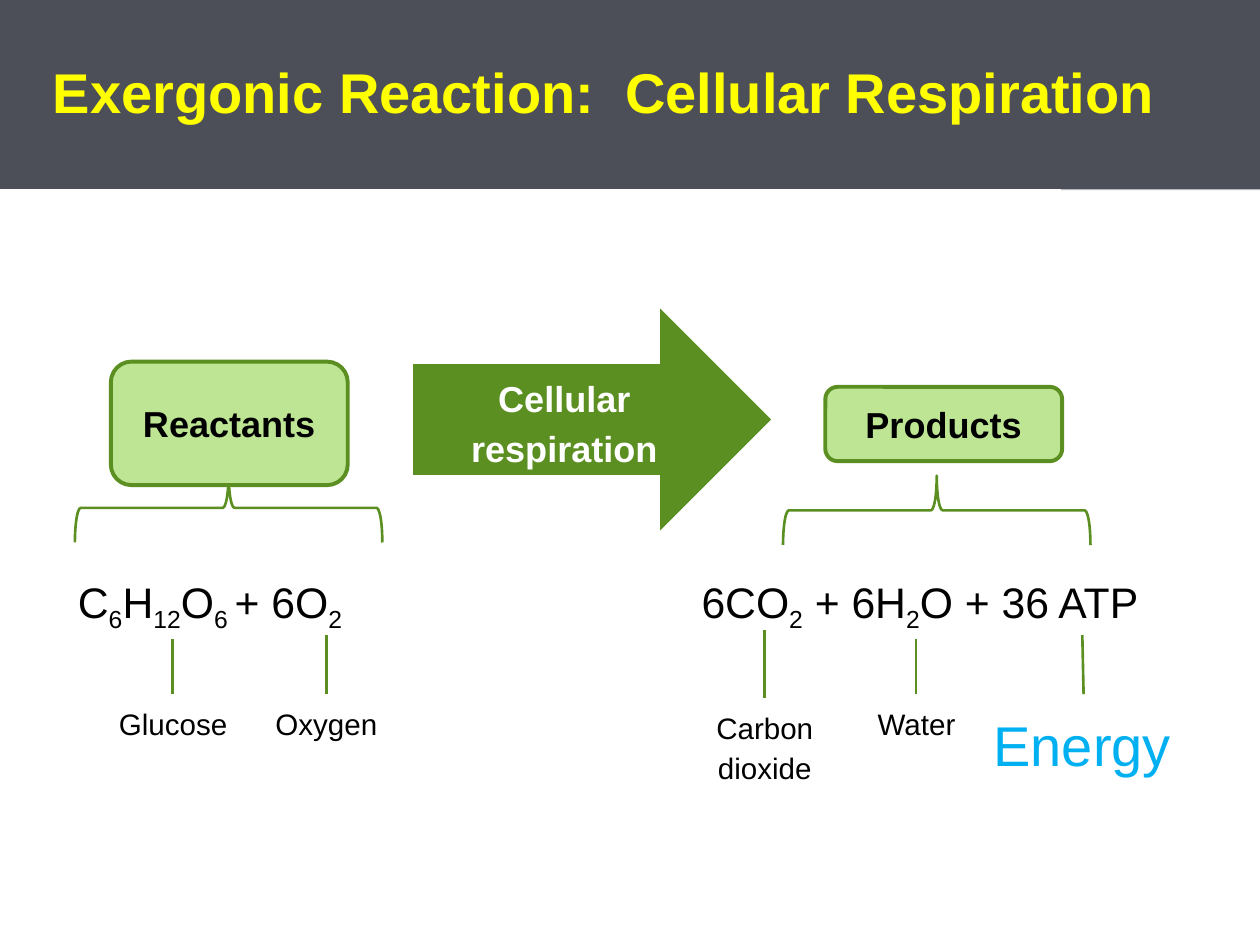
from pptx import Presentation
from pptx.dml.color import RGBColor
from pptx.enum.shapes import MSO_CONNECTOR, MSO_SHAPE
from pptx.enum.text import MSO_ANCHOR, MSO_AUTO_SIZE, PP_ALIGN
from pptx.oxml.ns import qn
from pptx.util import Inches, Pt
from lxml import etree

RECT, ROUND = MSO_SHAPE.RECTANGLE, MSO_SHAPE.ROUNDED_RECTANGLE
ARROW, BRACE = MSO_SHAPE.RIGHT_ARROW, MSO_SHAPE.RIGHT_BRACE
STRAIGHT = MSO_CONNECTOR.STRAIGHT
LEFT, CENTER = PP_ALIGN.LEFT, PP_ALIGN.CENTER
MIDDLE = MSO_ANCHOR.MIDDLE
NO_FIT = MSO_AUTO_SIZE.NONE

FONT = "Arial"
GREEN, PALE_GREEN = "5B8F22", "BEE593"
BLACK, WHITE, YELLOW, BLUE = "000000", "FFFFFF", "FFFF00", "00B0F0"
SLATE, GREY = "4D4F58", "B5B7BF"
HEADING, FORMULA, LABEL, LARGE = 20.6, 24.4, 16.9, 32


def rgb(color):
    return RGBColor.from_string(color)


def inches(box):
    return [Inches(v) for v in box]


def set_margins(tf, left, top, right, bottom):
    tf.margin_left, tf.margin_top = Inches(left), Inches(top)
    tf.margin_right, tf.margin_bottom = Inches(right), Inches(bottom)


def write(tf, text, size, color, bold=False, align=CENTER, spacing=1.15):
    """Write one paragraph; parts between underscores become subscripts."""
    p = tf.paragraphs[0]
    p.alignment, p.line_spacing = align, spacing
    for i, part in enumerate(text.split("_")):
        if not part:
            continue
        r = p.add_run()
        r.text = part
        r.font.name, r.font.size, r.font.bold = FONT, Pt(size), bold
        r.font.color.rgb = rgb(color)
        if i % 2:
            r.font._element.set("baseline", "-25000")
    return p


def add_shape(slide, kind, box, fill=None, line=None, width=1.5):
    s = slide.shapes.add_shape(kind, *inches(box))
    s.shadow.inherit = False
    if fill:
        s.fill.solid()
        s.fill.fore_color.rgb = rgb(fill)
    else:
        s.fill.background()
    if line:
        s.line.color.rgb = rgb(line)
        s.line.width = Pt(width)
    else:
        s.line.fill.background()
    return s


def add_text(slide, box, text, size, color=BLACK, align=CENTER, wrap=False):
    tf = slide.shapes.add_textbox(*inches(box)).text_frame
    tf.word_wrap = wrap
    write(tf, text, size, color, align=align)


def add_leader(slide, start, end):
    c = slide.shapes.add_connector(STRAIGHT, *inches(start + end))
    c.line.color.rgb = rgb(GREEN)
    c.line.width = Pt(1.5)
    etree.SubElement(c._element.spPr, qn("a:effectLst"))


def add_header(slide, box, text):
    # Grey block behind the right end of the title band
    add_shape(slide, RECT, (8.42, 0, 1.58, 1.51), GREY)
    title = slide.shapes.title
    slide.shapes._spTree.append(title._element)
    title.left, title.top, title.width, title.height = inches(box)
    title.fill.solid()
    title.fill.fore_color.rgb = rgb(SLATE)
    tf = title.text_frame
    tf.vertical_anchor, tf.auto_size, tf.word_wrap = MIDDLE, NO_FIT, True
    set_margins(tf, 0.17, 0.07, 0.19, 0.07)
    p = write(tf, text, LARGE, YELLOW, True, LEFT, 0.95)
    p._p.get_or_add_pPr().set("marL", str(Inches(0.25)))


def add_process_arrow(slide, box, text):
    tf = add_shape(slide, ARROW, box, GREEN).text_frame
    tf.word_wrap, tf.vertical_anchor = True, MIDDLE
    write(tf, text, HEADING, WHITE, True)


def add_side(slide, heading, heading_box, brace_box, formula, formula_box, labels):
    """One side of the reaction: heading, brace, formula and labelled leaders."""
    # Brace turned so that it points up at the heading
    add_shape(slide, BRACE, brace_box, line=GREEN).rotation = 270
    tf = add_shape(slide, ROUND, heading_box, PALE_GREEN, GREEN, 2.25).text_frame
    tf.word_wrap, tf.vertical_anchor = True, MIDDLE
    set_margins(tf, 0.19, 0.09, 0.19, 0.09)
    write(tf, heading, HEADING, BLACK, True, spacing=1.0)

    # Formula and the names of its parts
    add_text(slide, formula_box, formula, FORMULA, align=LEFT)
    for text, box, start, end, size, color, wrap in labels:
        add_text(slide, box, text, size, color, wrap=wrap)
        add_leader(slide, start, end)


def main():
    prs = Presentation()
    prs.slide_width, prs.slide_height = Inches(10), Inches(7.5)
    slide = prs.slides.add_slide(prs.slide_layouts[5])

    add_header(slide, (0, 0, 10, 1.5), "Exergonic Reaction:  Cellular Respiration")
    add_process_arrow(slide, (3.28, 2.45, 2.84, 1.76), "Cellular respiration")
    add_side(
        slide, "Reactants", (0.88, 2.87, 1.88, 0.98), (1.54, 2.81, 0.55, 2.44),
        "C_6_H_12_O_6 _+ 6O_2_", (0.52, 4.45, 2.41, 0.57),
        [
            ("Glucose", (0.84, 5.51, 1.07, 0.43), (1.37, 5.07), (1.37, 5.51), LABEL, BLACK, False),
            ("Oxygen", (2.08, 5.51, 1.02, 0.43), (2.59, 5.04), (2.59, 5.51), LABEL, BLACK, False),
        ],
    )
    add_side(
        slide, "Products", (6.55, 3.07, 1.88, 0.59), (7.16, 2.83, 0.55, 2.44),
        "6CO_2_ + 6H_2_O + 36 ATP", (5.47, 4.45, 3.74, 0.57),
        [
            ("Carbon dioxide", (5.47, 5.54, 1.2, 0.75), (6.07, 5), (6.07, 5.54), LABEL, BLACK, True),
            ("Water", (6.86, 5.51, 0.83, 0.43), (7.27, 5.07), (7.27, 5.51), LABEL, BLACK, False),
            ("Energy", (7.78, 5.51, 1.62, 0.67), (8.59, 5.04), (8.6, 5.51), LARGE, BLUE, False),
        ],
    )
    prs.save("out.pptx")


if __name__ == "__main__":
    main()
